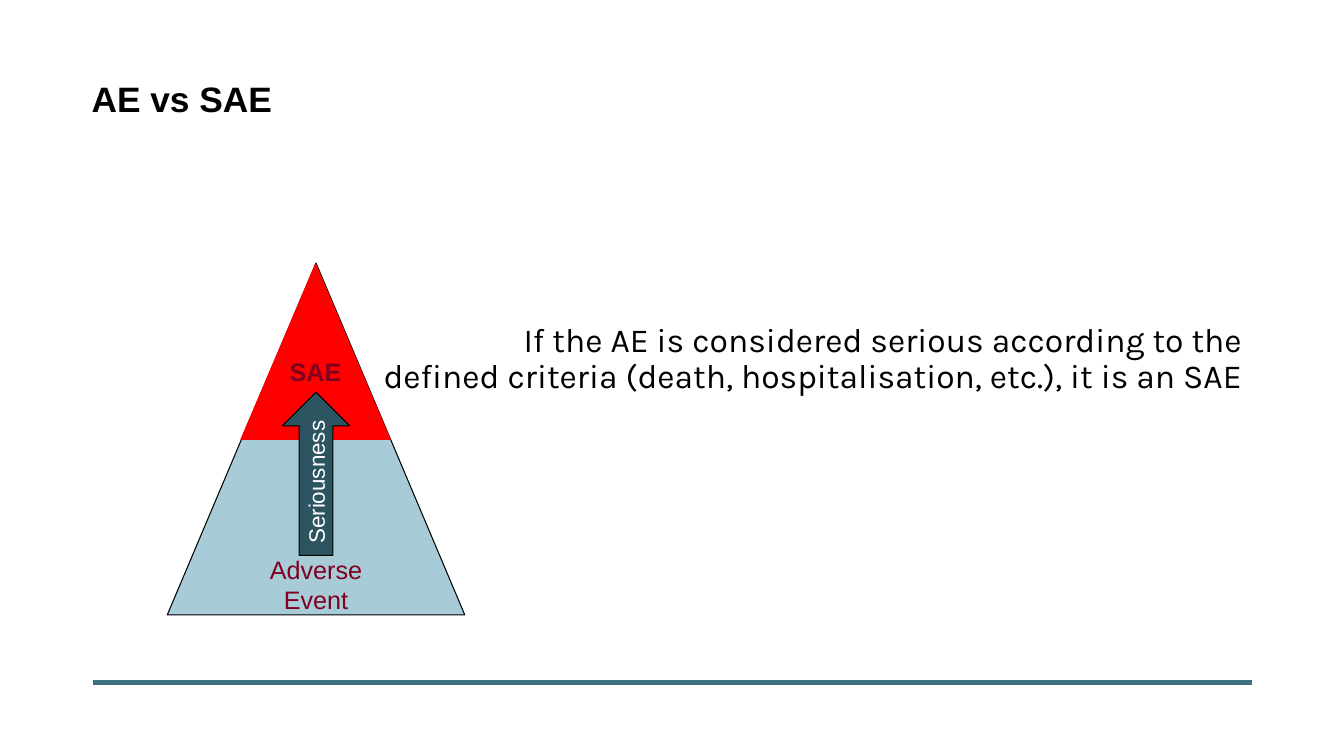
import pptx
import pptx.util
import pptx.dml.color
import pptx.enum.shapes
import pptx.enum.text
import pptx.oxml.ns
import lxml.etree

Pt = pptx.util.Pt
RGB = pptx.dml.color.RGBColor.from_string
MSO = pptx.enum.shapes.MSO_SHAPE
ALIGN = pptx.enum.text.PP_ALIGN
ANCHOR = pptx.enum.text.MSO_ANCHOR

THEME = {
    "ink": "000000", "rule": "3B7181", "event": "A7CCD7", "serious": "FF0000",
    "arrow": "2C5561", "label": "800020", "light": "FFFFFF",
    "sans": "Arial", "body": "Karla",
    "title_size": 25.2, "body_size": 24, "label_size": 18, "arrow_size": 16,
}

prs = pptx.Presentation()
prs.slide_width = pptx.util.Inches(13.33)
prs.slide_height = pptx.util.Inches(7.5)
s = prs.slides.add_slide(prs.slide_layouts[6])


def box(x, y, w, h):
    return [int(side * share / 100) for side, share in
            zip((prs.slide_width, prs.slide_height) * 2, (x, y, w, h))]


def write(sp, lines, font, size, color, bold, para, frame):
    tf = sp.text_frame
    for name, value in frame.items():
        setattr(tf, name, value)
    for i, line in enumerate(lines):
        p = tf.paragraphs[0] if i == 0 else tf.add_paragraph()
        p.text = line
        for name, value in para.items():
            setattr(p, name, value)
        for r in p.runs:
            for name, value in {"name": THEME[font], "size": Pt(THEME[size]), "bold": bold}.items():
                setattr(r.font, name, value)
            r.font.color.rgb = RGB(THEME[color])


x, y, w, h = box(6.9, 90.27, 86.25, 0)
rule = s.shapes.add_connector(pptx.enum.shapes.MSO_CONNECTOR.STRAIGHT, x, y, x + w, y)
rule.line.color.rgb = RGB(THEME["rule"])
rule.line.width = Pt(3)
lxml.etree.SubElement(rule.element.spPr, pptx.oxml.ns.qn("a:effectLst"))

texts = [
    ((6.08, 10, 87.08, 6.8), "AE vs SAE", "sans", "title_size", True, ALIGN.LEFT),
    ((26.25, 40.93, 66.9, 13.33),
     "If the AE is considered serious according to the\v"
     "defined criteria (death, hospitalisation, etc.), it is an SAE",
     "body", "body_size", False, ALIGN.RIGHT),
]
for place, text, font, size, bold, align in texts:
    sp = s.shapes.add_textbox(*box(*place))
    write(sp, [text], font, size, "ink", bold,
          {"alignment": align, "line_spacing": 0.9},
          {"word_wrap": True, "vertical_anchor": ANCHOR.MIDDLE})

shapes = [
    (MSO.ISOSCELES_TRIANGLE, (12.45, 34.8, 22.13, 46.53), "event", "ink",
     ["Adverse", "Event"], "label_size", "label", False,
     {"word_wrap": False, "vertical_anchor": ANCHOR.BOTTOM, "margin_left": 0,
      "margin_top": Pt(17), "margin_right": 0, "margin_bottom": 0}),
    (MSO.ISOSCELES_TRIANGLE, (17.93, 34.93, 11.1, 23.2), "serious", "serious",
     ["SAE"], "label_size", "label", True,
     {"word_wrap": False, "vertical_anchor": ANCHOR.TOP, "margin_top": Pt(3)}),
    (MSO.UP_ARROW, (21, 51.87, 5.03, 21.6), "arrow", "ink",
     ["Seriousness"], "arrow_size", "light", False,
     {"word_wrap": True, "vertical_anchor": ANCHOR.MIDDLE}),
]
for kind, place, fill, line, lines, size, color, bold, frame in shapes:
    sp = s.shapes.add_shape(kind, *box(*place))
    sp.shadow.inherit = False
    sp.fill.solid()
    sp.fill.fore_color.rgb = RGB(THEME[fill])
    sp.line.color.rgb = RGB(THEME[line])
    sp.line.width = Pt(0.75)
    write(sp, lines, "sans", size, color, bold, {"alignment": ALIGN.CENTER}, frame)
    if kind == MSO.UP_ARROW:
        sp.text_frame._txBody.bodyPr.set("vert", "vert270")

prs.save("out.pptx")
